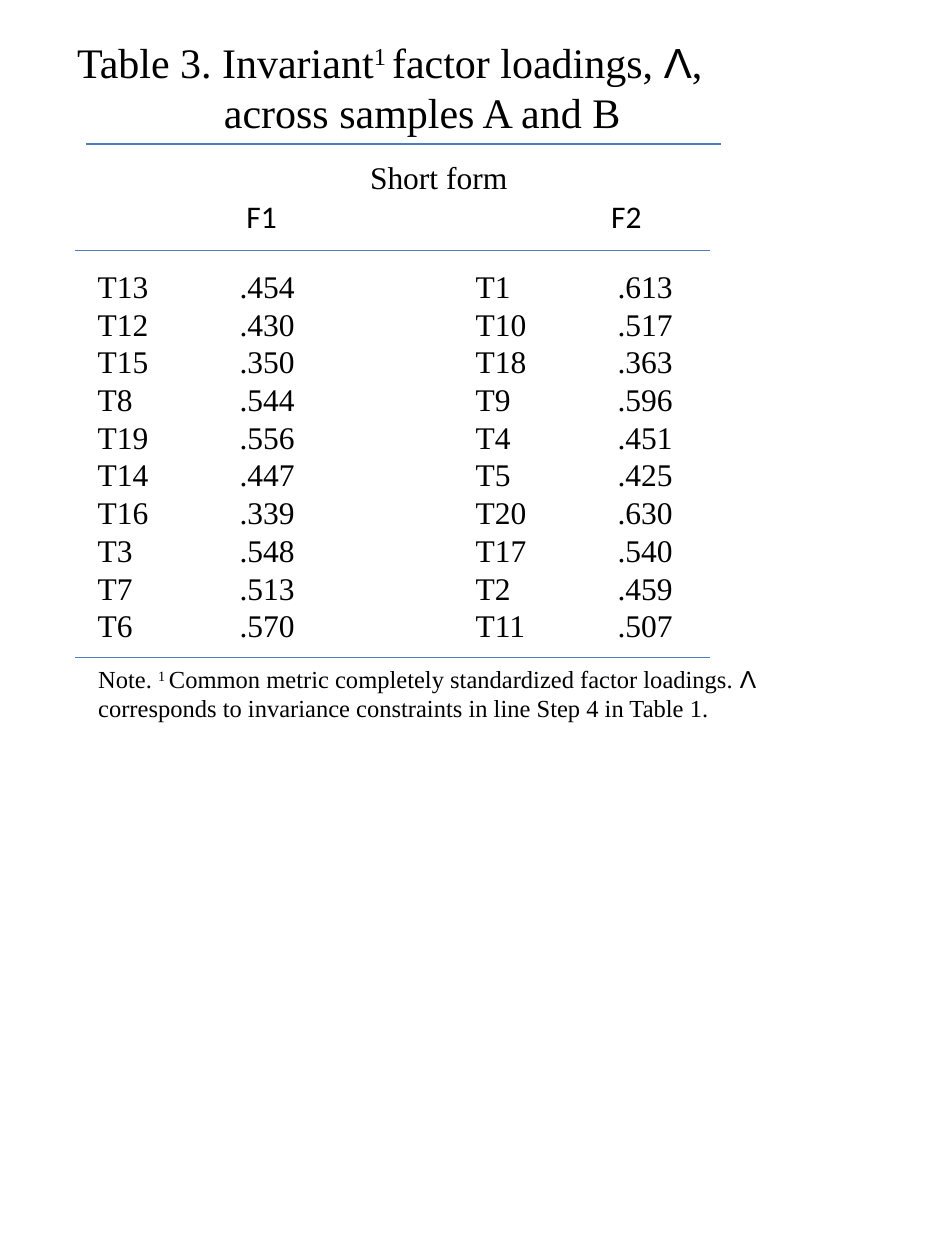
from dataclasses import dataclass

from lxml import etree
from pptx import Presentation
from pptx.dml.color import RGBColor
from pptx.enum.shapes import MSO_CONNECTOR
from pptx.enum.text import MSO_ANCHOR, MSO_AUTO_SIZE, PP_ALIGN
from pptx.oxml.ns import qn
from pptx.slide import Slide
from pptx.text.text import TextFrame
from pptx.util import Cm, Pt

STRAIGHT = MSO_CONNECTOR.STRAIGHT
TOP, MIDDLE = MSO_ANCHOR.TOP, MSO_ANCHOR.MIDDLE
LEFT = PP_ALIGN.LEFT
NO_AUTOFIT = MSO_AUTO_SIZE.NONE

SERIF, SANS, GREEK = "Times New Roman", "Calibri", "Arial"
BLACK, BLUE = "000000", "4B7EBC"


@dataclass
class Piece:
    text: str
    font: str = SERIF
    raised: bool = False


@dataclass
class Label:
    left: float
    top: float
    width: float
    height: float
    lines: list[list[Piece]]
    size: float = 18


@dataclass
class Rule:
    left: float
    top: float
    width: float = 12.8


LAMBDA = Piece("Λ", GREEK)
FOOTNOTE_MARK = Piece("1 ", raised=True)

TITLE = Label(1.3, 0.61, 13.36, 2.31, [
    [Piece("Table 3. Invariant"), FOOTNOTE_MARK,
     Piece("factor loadings, "), LAMBDA, Piece(",")],
    [Piece("across samples A and B")],
], 24)

LABELS = [
    Label(7.21, 3.07, 3.33, 1.02, [[Piece("Short form")]]),
    Label(4.72, 3.84, 1.3, 1.02, [[Piece("F1", SANS)]]),
    Label(12.07, 3.84, 1.3, 1.02, [[Piece("F2", SANS)]]),
    Label(1.73, 13.26, 14.48, 1.45, [
        [Piece("Note. "), FOOTNOTE_MARK,
         Piece("Common metric completely standardized factor loadings. "), LAMBDA],
        [Piece("corresponds to invariance constraints in line Step 4 in Table 1.")],
    ], 14),
]

RULES = [Rule(1.73, 2.9), Rule(1.52, 5.05), Rule(1.52, 13.26)]

LOADINGS = [
    ("T13", ".454", "T1", ".613"),
    ("T12", ".430", "T10", ".517"),
    ("T15", ".350", "T18", ".363"),
    ("T8", ".544", "T9", ".596"),
    ("T19", ".556", "T4", ".451"),
    ("T14", ".447", "T5", ".425"),
    ("T16", ".339", "T20", ".630"),
    ("T3", ".548", "T17", ".540"),
    ("T7", ".513", "T2", ".459"),
    ("T6", ".570", "T11", ".507"),
]
COLUMN_WIDTHS = [2.86, 4.76, 2.86, 1.9]
ROW_HEIGHT = 0.76


def color(value: str) -> RGBColor:
    return RGBColor.from_string(value)


def write(frame: TextFrame, lines: list[list[Piece]], *, size: float = 18,
          fill: str = BLACK, line_spacing: float = 1.0) -> None:
    for number, pieces in enumerate(lines):
        paragraph = frame.paragraphs[0] if number == 0 else frame.add_paragraph()
        paragraph.alignment = LEFT
        paragraph.line_spacing = line_spacing
        for piece in pieces:
            run = paragraph.add_run()
            run.text = piece.text
            run.font.name = piece.font
            run.font.size = Pt(size)
            run.font.color.rgb = color(fill)
            if piece.raised:
                run.font._element.set("baseline", "30000")


def add_title(slide: Slide, title: Label) -> None:
    heading = slide.shapes.title
    heading.left, heading.top = Cm(title.left), Cm(title.top)
    heading.width, heading.height = Cm(title.width), Cm(title.height)
    frame = heading.text_frame
    frame.word_wrap = False
    frame.auto_size = NO_AUTOFIT
    frame.vertical_anchor = TOP
    write(frame, title.lines, size=title.size)
    second_line = frame.paragraphs[1]._p.get_or_add_pPr()
    second_line.set("marL", str(Cm(2.96)))
    second_line.set("indent", "0")


def add_label(slide: Slide, label: Label) -> None:
    box = slide.shapes.add_textbox(
        Cm(label.left), Cm(label.top), Cm(label.width), Cm(label.height))
    box.text_frame.word_wrap = False
    write(box.text_frame, label.lines, size=label.size)


def add_rule(slide: Slide, rule: Rule) -> None:
    line = slide.shapes.add_connector(
        STRAIGHT, Cm(rule.left), Cm(rule.top),
        Cm(rule.left + rule.width), Cm(rule.top))
    line.line.color.rgb = color(BLUE)
    line.line.width = Pt(0.75)
    etree.SubElement(line._element.spPr, qn("a:effectLst"))


def add_loadings(slide: Slide) -> None:
    table = slide.shapes.add_table(
        len(LOADINGS), len(COLUMN_WIDTHS), Cm(1.97), Cm(5.42),
        Cm(sum(COLUMN_WIDTHS)), Cm(ROW_HEIGHT * len(LOADINGS))).table
    table.first_row = False
    table.horz_banding = False
    for column, width in zip(table.columns, COLUMN_WIDTHS):
        column.width = Cm(width)
    for row, values in zip(table.rows, LOADINGS):
        row.height = Cm(ROW_HEIGHT)
        for cell, value in zip(row.cells, values):
            cell.fill.background()
            cell.margin_left = cell.margin_right = Cm(0)
            cell.margin_top = cell.margin_bottom = Cm(0)
            cell.vertical_anchor = MIDDLE
            borders = cell._tc.get_or_add_tcPr()
            for position, side in enumerate(("a:lnL", "a:lnR", "a:lnT", "a:lnB")):
                border = etree.Element(qn(side), w="0")
                etree.SubElement(border, qn("a:noFill"))
                borders.insert(position, border)
            write(cell.text_frame, [[Piece(value)]])


def main() -> None:
    deck = Presentation()
    deck.slide_width, deck.slide_height = Cm(19.05), Cm(25.4)
    slide = deck.slides.add_slide(deck.slide_layouts[5])
    add_title(slide, TITLE)
    add_loadings(slide)
    for label in LABELS:
        add_label(slide, label)
    for rule in RULES:
        add_rule(slide, rule)
    deck.save("out.pptx")


if __name__ == "__main__":
    main()
